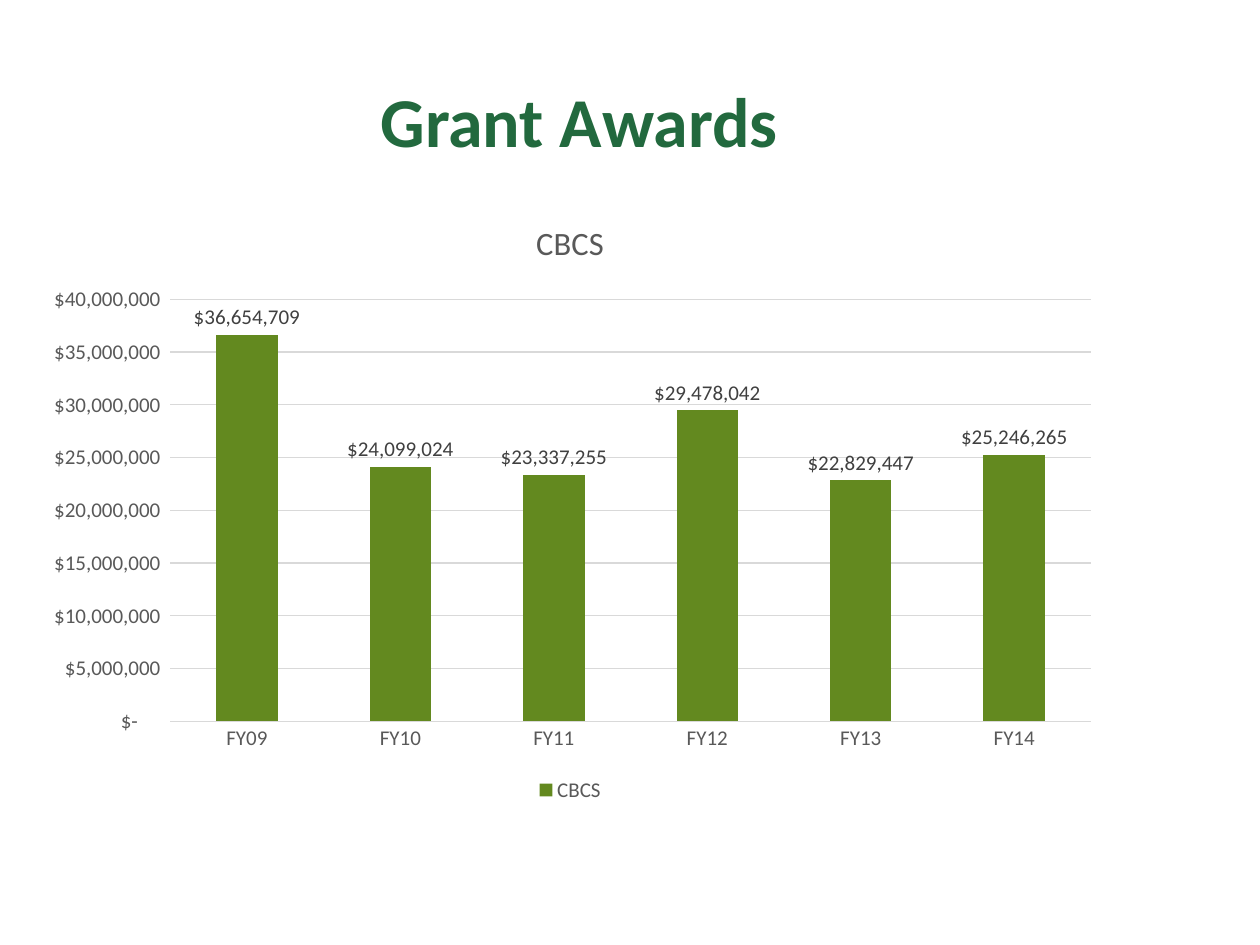
from pptx import Presentation
from pptx.chart.data import CategoryChartData
from pptx.dml.color import RGBColor
from pptx.enum.chart import XL_CHART_TYPE as ChartType
from pptx.enum.chart import XL_LABEL_POSITION as LabelPosition
from pptx.enum.chart import XL_LEGEND_POSITION as LegendPosition
from pptx.enum.chart import XL_TICK_MARK as TickMark
from pptx.enum.text import MSO_ANCHOR, PP_ALIGN
from pptx.util import Cm, Pt

# Content
TITLE = "Grant Awards"
SERIES = "CBCS"
AWARDS = {
    "FY09": 36654709,
    "FY10": 24099024,
    "FY11": 23337255,
    "FY12": 29478042,
    "FY13": 22829447,
    "FY14": 25246265,
}
DOLLARS = '_("$"* #,##0_);_("$"* \\(#,##0\\);_("$"* "-"??_);_(@_)'

# Style
FONT = "Calibri"
DARK_GREEN = RGBColor(0x22, 0x69, 0x3E)
BAR_GREEN = RGBColor(0x63, 0x89, 0x1F)
TEXT_GREY = RGBColor(0x59, 0x59, 0x59)
LABEL_GREY = RGBColor(0x40, 0x40, 0x40)
GRID_GREY = RGBColor(0xD9, 0xD9, 0xD9)


def style_font(font, size, color, bold=False):
    font.name = FONT
    font.size = Pt(size)
    font.bold = bold
    font.color.rgb = color


deck = Presentation()
deck.slide_width, deck.slide_height = Cm(25.4), Cm(19.05)
page = deck.slides.add_slide(deck.slide_layouts[5])

# Title
title = page.shapes.title
title.left, title.top = Cm(-0.43), Cm(0.81)
title.width, title.height = Cm(22.86), Cm(3.18)
title.text_frame.text = TITLE
title.text_frame.vertical_anchor = MSO_ANCHOR.MIDDLE
para = title.text_frame.paragraphs[0]
para.alignment = PP_ALIGN.CENTER
properties = para._p.get_or_add_pPr()
properties.set("marL", str(Cm(1.35)))
properties.set("indent", "0")
style_font(para.runs[0].font, 40, DARK_GREEN, bold=True)

# Chart
data = CategoryChartData(number_format=DOLLARS)
data.categories = list(AWARDS)
data.add_series(SERIES, list(AWARDS.values()))
chart = page.shapes.add_chart(
    ChartType.COLUMN_CLUSTERED, Cm(0.56), Cm(3.94), Cm(21.87), Cm(12.34), data
).chart
chart.font.name = FONT
chart.font.size = Pt(10)

chart.has_title = True
chart.chart_title.text_frame.text = SERIES
chart_heading = chart.chart_title.text_frame.paragraphs[0].runs[0]
style_font(chart_heading.font, 18.6, TEXT_GREY)
chart.chart_title.include_in_layout = False

chart.has_legend = True
chart.legend.position = LegendPosition.BOTTOM
chart.legend.include_in_layout = False
style_font(chart.legend.font, 12, TEXT_GREY)

# Axes
for axis in (chart.category_axis, chart.value_axis):
    axis.major_tick_mark = axis.minor_tick_mark = TickMark.NONE
    axis.format.line.fill.background()
    style_font(axis.tick_labels.font, 12, TEXT_GREY)
amounts = chart.value_axis
amounts.minimum_scale, amounts.maximum_scale = 0, 40000000
amounts.major_unit = 5000000
amounts.tick_labels.number_format = DOLLARS
amounts.tick_labels.number_format_is_linked = False
amounts.has_major_gridlines = True
grid = amounts.major_gridlines.format.line
grid.color.rgb = GRID_GREY
grid.width = Pt(0.75)

# Bars and their labels
plot = chart.plots[0]
plot.gap_width = 150
plot.vary_by_categories = False
bars = plot.series[0]
bars.format.fill.solid()
bars.format.fill.fore_color.rgb = BAR_GREEN
labels = bars.data_labels
labels.show_value = True
labels.position = LabelPosition.OUTSIDE_END
labels.number_format = DOLLARS
labels.number_format_is_linked = False
style_font(labels.font, 12, LABEL_GREY)

deck.save("out.pptx")
